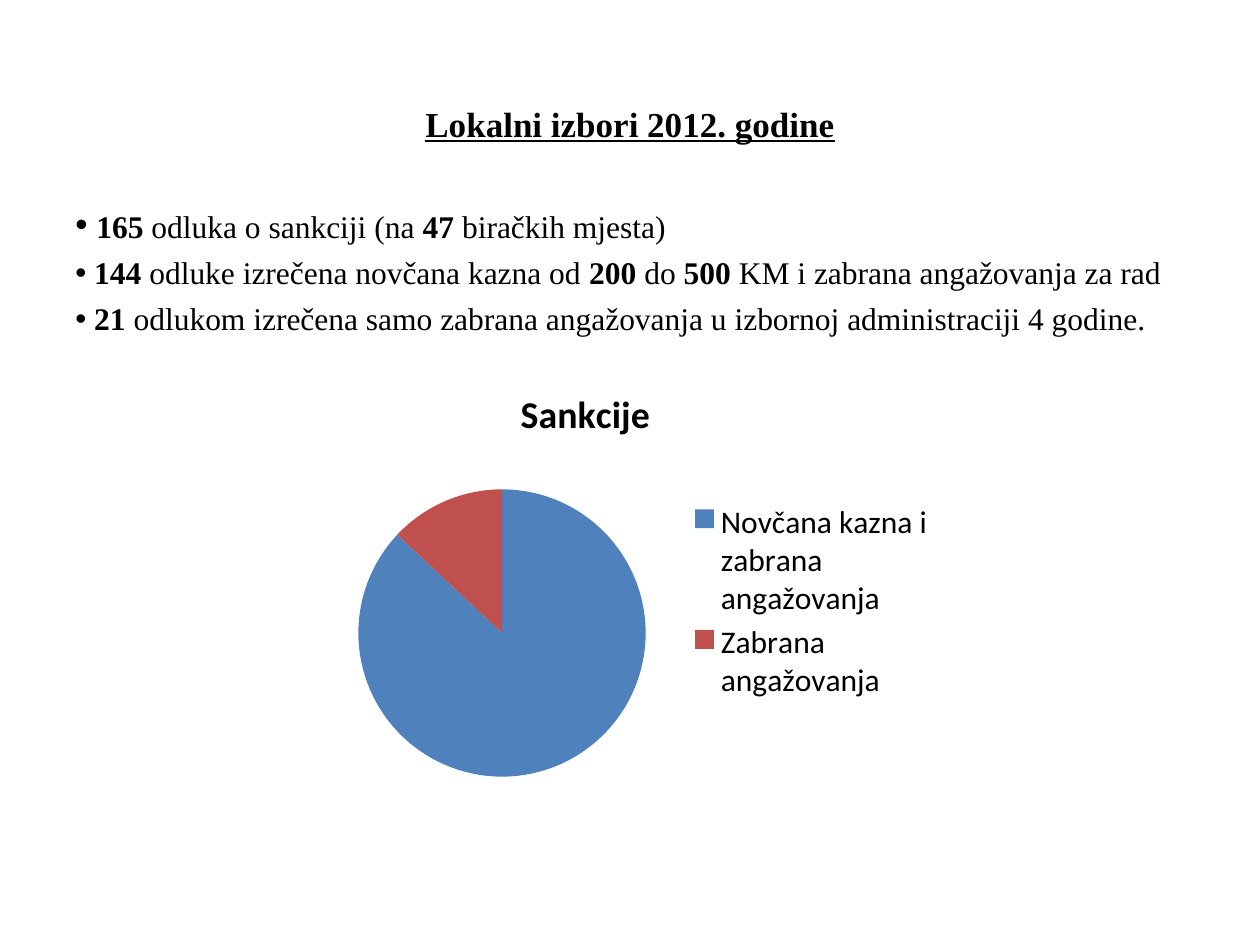
from dataclasses import dataclass

from lxml.etree import SubElement
from pptx import Presentation
from pptx.chart.data import CategoryChartData
from pptx.dml.color import RGBColor
from pptx.enum.chart import XL_CHART_TYPE, XL_LEGEND_POSITION
from pptx.enum.text import PP_ALIGN
from pptx.oxml.ns import qn
from pptx.util import Emu, Pt

EMU_PER_PX = 914400 / 126
COLORS = {"ink": "000000", "fine": "4F81BD", "ban": "C0504D"}
BODY_FONT, CHART_FONT = "Times New Roman", "Calibri"


@dataclass(frozen=True)
class Statement:
    """A paragraph whose pieces alternate between plain and bold."""
    pieces: tuple[str, ...]
    space_before: float
    lead_size: int = 18


HEADING = "Lokalni izbori 2012. godine"
STATEMENTS = (
    Statement((" ", "165 ", "odluka o sankciji (na ", "47", " biračkih mjesta)"), 33.6, 20),
    Statement((" ", "144 ", "odluke izrečena novčana kazna od ", "200 ", "do ", "500",
               " KM i zabrana angažovanja za rad"), 4.7),
    Statement((" ", "21 ", "odlukom izrečena samo zabrana angažovanja u izbornoj "
               "administraciji 4 godine."), 4.7),
)
SANCTIONS = {"Novčana kazna i zabrana angažovanja": 87, "Zabrana angažovanja": 13}
PIE_AREA = {"x": 0.138, "y": 0.264, "w": 0.494, "h": 0.605}


def px(length: int) -> Emu:
    return Emu(round(length * EMU_PER_PX))


def box(left: int, top: int, width: int, height: int) -> tuple[Emu, ...]:
    return tuple(px(length) for length in (left, top, width, height))


def format_font(font, **values) -> None:
    for attribute, value in values.items():
        setattr(font, attribute, value)
    font.color.rgb = RGBColor.from_string(COLORS["ink"])


def add_bullet(paragraph) -> None:
    properties = paragraph._p.get_or_add_pPr()
    SubElement(properties, qn("a:buFont"), typeface="Arial")
    SubElement(properties, qn("a:buChar"), char="•")


def write_statement(paragraph, statement: Statement) -> None:
    paragraph.alignment = PP_ALIGN.JUSTIFY
    paragraph.space_before = Pt(statement.space_before)
    add_bullet(paragraph)
    for index, piece in enumerate(statement.pieces):
        run = paragraph.add_run()
        run.text = piece
        size = 18 if index else statement.lead_size
        format_font(run.font, name=BODY_FONT, size=Pt(size), bold=index % 2 == 1)


def add_findings(slide) -> None:
    frame = slide.shapes.add_textbox(*box(63, 96, 1134, 748)).text_frame
    frame.word_wrap = True
    heading = frame.paragraphs[0]
    heading.alignment = PP_ALIGN.CENTER
    run = heading.add_run()
    run.text = HEADING
    format_font(run.font, name=BODY_FONT, size=Pt(20), bold=True, underline=True)
    for statement in STATEMENTS:
        write_statement(frame.add_paragraph(), statement)


def place_plot(chart) -> None:
    plot_area = chart._chartSpace.chart.plotArea
    for old_layout in plot_area.findall(qn("c:layout")):
        plot_area.remove(old_layout)
    layout = plot_area.makeelement(qn("c:layout"))
    plot_area.insert(0, layout)
    manual = SubElement(layout, qn("c:manualLayout"))
    settings = {"layoutTarget": "inner", "xMode": "edge", "yMode": "edge", **PIE_AREA}
    for tag, value in settings.items():
        SubElement(manual, qn(f"c:{tag}"), val=str(value))


def add_sanctions_pie(slide) -> None:
    data = CategoryChartData()
    data.categories = list(SANCTIONS)
    data.add_series("Series 1", list(SANCTIONS.values()))
    chart = slide.shapes.add_chart(XL_CHART_TYPE.PIE, *box(223, 364, 725, 475), data).chart
    format_font(chart.font, name=CHART_FONT, size=Pt(18))

    # Title and legend
    chart.has_title = True
    chart.chart_title.include_in_layout = False
    title = chart.chart_title.text_frame
    title.text = "Sankcije"
    format_font(title.paragraphs[0].runs[0].font, name=CHART_FONT, size=Pt(21.6), bold=True)
    chart.has_legend = True
    chart.legend.position = XL_LEGEND_POSITION.RIGHT
    chart.legend.include_in_layout = False

    # Slices
    plot = chart.plots[0]
    plot.vary_by_categories = True
    for index, name in enumerate(("fine", "ban")):
        fill = plot.series[0].points[index].format.fill
        fill.solid()
        fill.fore_color.rgb = RGBColor.from_string(COLORS[name])
    place_plot(chart)


def main() -> None:
    presentation = Presentation()
    presentation.slide_width, presentation.slide_height = px(1260), px(945)
    slide = presentation.slides.add_slide(presentation.slide_layouts[6])
    add_findings(slide)
    add_sanctions_pie(slide)
    presentation.save("out.pptx")


if __name__ == "__main__":
    main()
